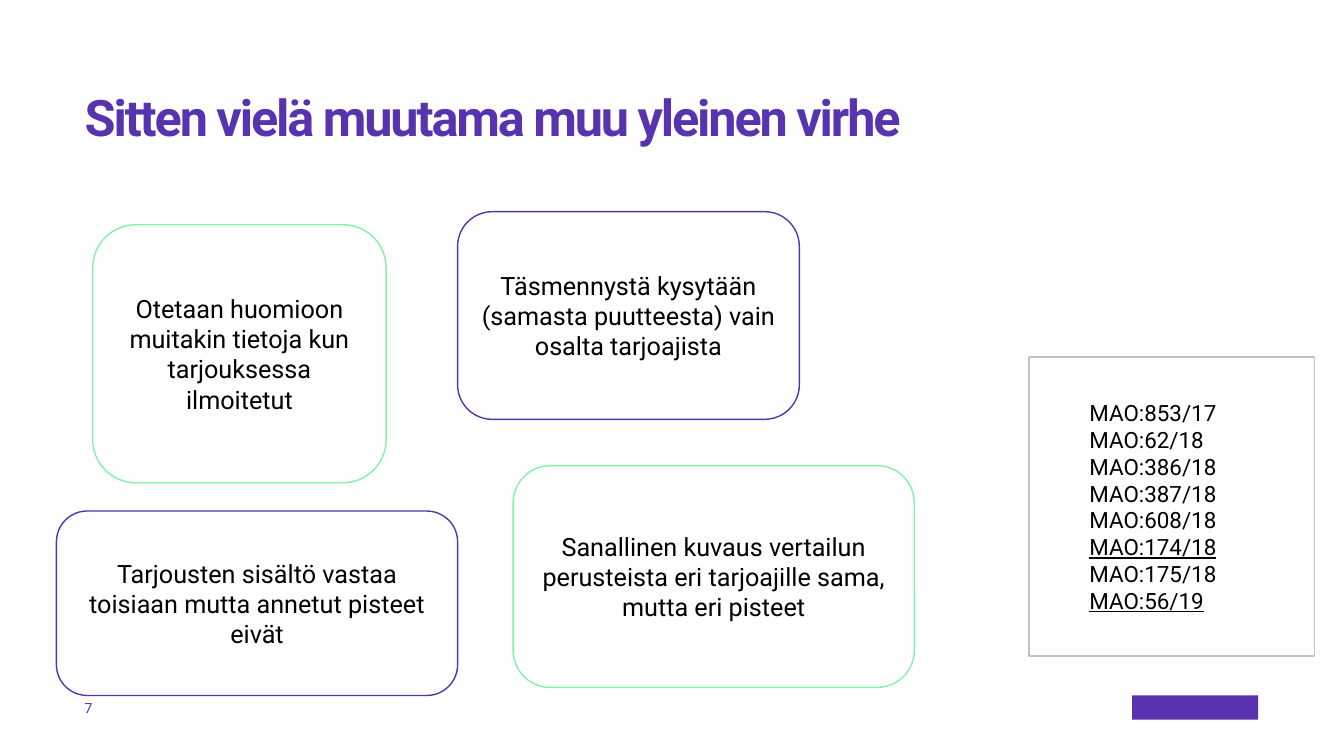
from pptx import Presentation
from pptx.dml.color import RGBColor
from pptx.enum.shapes import MSO_SHAPE as Shape
from pptx.enum.text import MSO_ANCHOR as Anchor, MSO_AUTO_SIZE as AutoSize, PP_ALIGN as Align
from pptx.util import Inches, Pt

PURPLE = RGBColor(0x57, 0x33, 0xAF)
GREEN = RGBColor(0x81, 0xF3, 0xA9)
GREY = RGBColor(0xC5, 0xBF, 0xCA)
WHITE = RGBColor(0xFF, 0xFF, 0xFF)
BLACK = RGBColor(0, 0, 0)
FONT = "Roboto"
WIDTH, HEIGHT = Inches(13.333), Inches(7.5)

# Left, top, width, height in percent of the slide; outline; text
ERRORS = [
    ((6.9, 29.73, 21.83, 34.13), GREEN,
     "Otetaan huomioon muitakin tietoja kun tarjouksessa ilmoitetut"),
    ((34.05, 28, 25.43, 27.47), PURPLE,
     "Täsmennystä kysytään (samasta puutteesta) vain osalta tarjoajista"),
    ((4.2, 67.6, 29.85, 24.4), PURPLE,
     "Tarjousten sisältö vastaa toisiaan mutta annetut pisteet eivät"),
    ((38.18, 61.6, 29.85, 29.33), GREEN,
     "Sanallinen kuvaus vertailun perusteista eri tarjoajille sama, mutta eri pisteet"),
]
CASES = ["MAO:853/17", "MAO:62/18", "MAO:386/18", "MAO:387/18",
         "MAO:608/18", "MAO:174/18", "MAO:175/18", "MAO:56/19"]
UNDERLINED = {"MAO:174/18", "MAO:56/19"}


def place(box):
    """Turn percentages of the slide into lengths."""
    x, y, w, h = box
    return [round(share * side / 100)
            for share, side in zip((x, y, w, h), (WIDTH, HEIGHT) * 2)]


def style(tf, size, color, bold=False):
    for p in tf.paragraphs:
        for r in p.runs:
            r.font.name, r.font.size, r.font.bold = FONT, Pt(size), bold
            r.font.color.rgb = color


def no_margins(tf):
    tf.margin_left = tf.margin_top = tf.margin_right = tf.margin_bottom = 0
    tf.word_wrap = True
    tf.auto_size = AutoSize.NONE


def add_title(s, box, text):
    title = s.shapes.title
    title.left, title.top, title.width, title.height = place(box)
    tf = title.text_frame
    tf.text = text
    no_margins(tf)
    tf.vertical_anchor = Anchor.TOP
    p = tf.paragraphs[0]
    p.alignment, p.line_spacing = Align.LEFT, 0.9
    style(tf, 36, PURPLE, bold=True)
    p.runs[0].font._element.set("spc", "-150")


def add_page_number(s, box, number):
    tf = s.shapes.add_textbox(*place(box)).text_frame
    tf.text = number
    no_margins(tf)
    tf.vertical_anchor = Anchor.MIDDLE
    style(tf, 10, PURPLE)


def add_box(s, kind, box, fill, outline=None):
    sp = s.shapes.add_shape(kind, *place(box))
    sp.shadow.inherit = False
    sp.fill.solid()
    sp.fill.fore_color.rgb = fill
    if outline is None:
        sp.line.fill.background()
    else:
        sp.line.color.rgb, sp.line.width = outline, Pt(1)
    return sp


def add_error(s, box, outline, text):
    tf = add_box(s, Shape.ROUNDED_RECTANGLE, box, WHITE, outline).text_frame
    tf.text = text
    tf.word_wrap, tf.vertical_anchor = True, Anchor.MIDDLE
    tf.paragraphs[0].alignment = Align.CENTER
    style(tf, 18, BLACK)


def add_cases(s, box, cases):
    tf = add_box(s, Shape.RECTANGLE, box, WHITE, GREY).text_frame
    tf.text = "\n".join(cases)
    tf.word_wrap, tf.vertical_anchor = True, Anchor.MIDDLE
    style(tf, 16, BLACK)
    for p in tf.paragraphs:
        p.level, p.alignment = 1, Align.LEFT
        pPr = p._p.get_or_add_pPr()
        pPr.set("marL", str(Inches(0.5)))
        pPr.set("indent", "0")
        p.runs[0].font.underline = p.text in UNDERLINED


def main():
    prs = Presentation()
    prs.slide_width, prs.slide_height = WIDTH, HEIGHT
    s = prs.slides.add_slide(prs.slide_layouts[5])

    # Title and footer
    add_title(s, (6.3, 12.27, 87.45, 23.07), "Sitten vielä muutama muu yleinen virhe")
    add_page_number(s, (6.3, 92, 3.53, 3.2), "7")
    add_box(s, Shape.RECTANGLE, (84.23, 92, 9.38, 3.2), PURPLE)

    # Case list and common errors
    add_cases(s, (76.58, 47.2, 21.23, 39.6), CASES)
    for box, outline, text in ERRORS:
        add_error(s, box, outline, text)

    prs.save("out.pptx")


if __name__ == "__main__":
    main()
